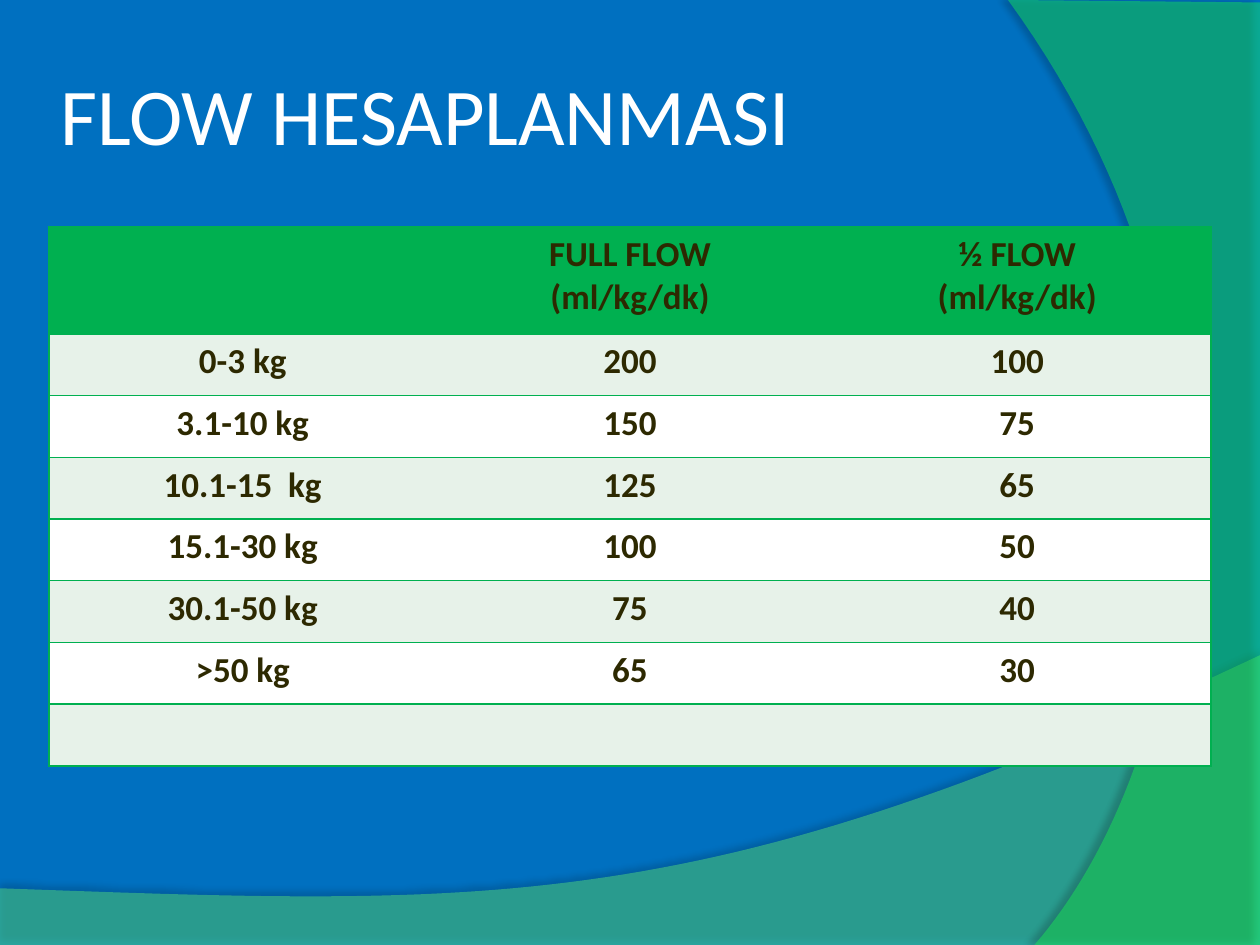
import pptx
import pptx.dml.color
import pptx.enum.text
import pptx.oxml
import pptx.oxml.ns
import pptx.util

GREEN, INK, WHITE, PALE = "00B050", "2D2901", "FFFFFF", "E7F2E9"
NS = pptx.oxml.ns.nsdecls("a")


def color(hex_code):
    return pptx.dml.color.RGBColor.from_string(hex_code)


def curve(p0, p1, p2, p3, steps=60):
    """Points along a cubic Bezier curve, from p0 to p3."""
    times = [i / steps for i in range(steps + 1)]
    return [tuple((1 - t) ** 3 * a + 3 * (1 - t) ** 2 * t * b
                  + 3 * (1 - t) * t ** 2 * c + t ** 3 * d
                  for a, b, c, d in zip(p0, p1, p2, p3)) for t in times]


deck = pptx.Presentation()
deck.slide_width = W = pptx.util.Inches(10)
deck.slide_height = H = pptx.util.Inches(7.5)
slide = deck.slides.add_slide(deck.slide_layouts[6])
slide.background.fill.solid()
slide.background.fill.fore_color.rgb = color("0070C0")

# Translucent waves: outline in inches, fill, opacity %,
# then shadow opacity %, distance in points and direction in degrees
bottom_wave = [(0, 7.51), (10, 7.51)] + curve((10, 5.2), (5.59, 7.29), (3.91, 7.19), (0, 7.05))
right_wave = [(10, 0.02), (10, 7.5)] + curve((8.21, 7.5), (9.35, 6.19), (10.18, 3), (8, 0))
for outline, fill, opacity, shade, distance, direction in [
        (bottom_wave, "5CE679", 45, 35, 3.5, 270),
        (right_wave, "19FF50", 40, 45, 4, 180)]:
    points = [(pptx.util.Inches(x), pptx.util.Inches(y)) for x, y in outline]
    builder = slide.shapes.build_freeform(*points[0])
    builder.add_line_segments(points[1:], close=True)
    wave = builder.convert_to_shape()
    wave.line.fill.background()
    wave.fill.solid()
    wave.fill.fore_color.rgb = color(fill)
    wave.fill._xPr.find(".//" + pptx.oxml.ns.qn("a:srgbClr")).append(
        pptx.oxml.parse_xml(f'<a:alpha {NS} val="{opacity * 1000}"/>'))
    wave._element.spPr.append(pptx.oxml.parse_xml(
        f'<a:effectLst {NS}><a:outerShdw blurRad="{pptx.util.Pt(4)}" '
        f'dist="{pptx.util.Pt(distance)}" dir="{direction * 60000}" algn="ctr" rotWithShape="0">'
        f'<a:srgbClr val="000000"><a:alpha val="{shade * 1000}"/></a:srgbClr>'
        '</a:outerShdw></a:effectLst>'))

# Title
title = slide.shapes.add_textbox(int(0.043 * W), int(0.0213 * H), int(0.907 * W), int(0.1973 * H))
frame = title.text_frame
frame.word_wrap = True
frame.vertical_anchor = pptx.enum.text.MSO_ANCHOR.MIDDLE
frame.margin_left = frame.margin_right = pptx.util.Inches(0.05)
heading = frame.paragraphs[0]
heading.text = "FLOW HESAPLANMASI"
heading.font.name = "Calibri"
heading.font.size = pptx.util.Pt(46)
heading.font.color.rgb = color(WHITE)

# Flow rates by body weight
rates = [
    ("", "FULL FLOW\n(ml/kg/dk)", "½ FLOW\n(ml/kg/dk)"),
    ("0-3 kg", "200", "100"),
    ("3.1-10 kg", "150", "75"),
    ("10.1-15  kg", "125", "65"),
    ("15.1-30 kg", "100", "50"),
    ("30.1-50 kg", "75", "40"),
    (">50 kg", "65", "30"),
    ("", "", ""),
]
last_column = len(rates[0]) - 1
table = slide.shapes.add_table(len(rates), len(rates[0]), int(0.039 * W), int(0.24 * H),
                               int(0.922 * W), int(0.5733 * H)).table
table.first_row = table.horz_banding = False
for r, rate in enumerate(rates):
    table.rows[r].height = pptx.util.Inches(0.49 if r else 0.85)
    for c, text in enumerate(rate):
        cell = table.cell(r, c)
        cell.text = text
        for paragraph in cell.text_frame.paragraphs:
            paragraph.alignment = pptx.enum.text.PP_ALIGN.CENTER
            paragraph.font.name = "Calibri"
            paragraph.font.size = pptx.util.Pt(20)
            paragraph.font.bold = True
            paragraph.font.color.rgb = color(INK)
        cell.fill.solid()
        cell.fill.fore_color.rgb = color(GREEN if r == 0 else PALE if r % 2 else WHITE)
        # Green rules around the table and between rows, none between columns
        ruled = {"L": c == 0, "R": c == last_column, "T": True, "B": True}
        for i, (side, shown) in enumerate(ruled.items()):
            paint = f'<a:solidFill><a:srgbClr val="{GREEN}"/></a:solidFill>' if shown else "<a:noFill/>"
            cell._tc.get_or_add_tcPr().insert(i, pptx.oxml.parse_xml(
                f'<a:ln{side} {NS} w="{pptx.util.Pt(1)}">{paint}</a:ln{side}>'))

deck.save("out.pptx")
